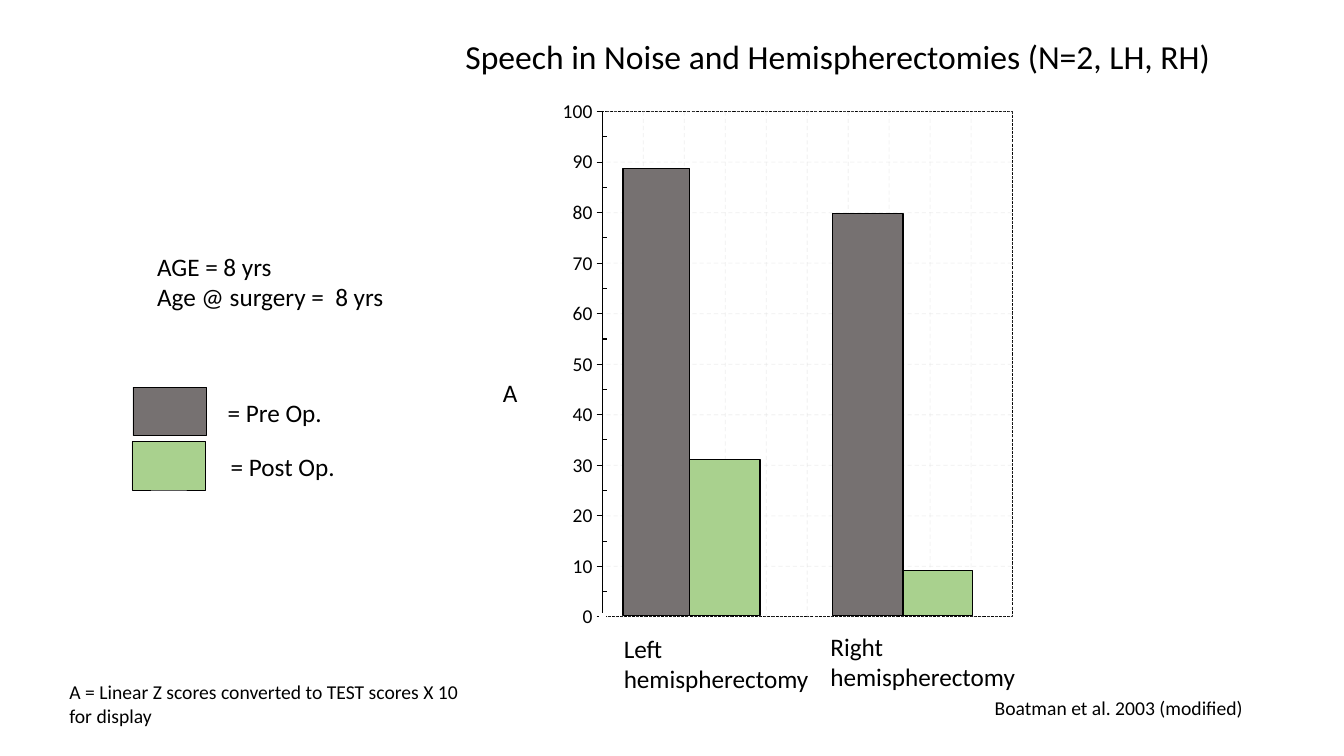
"""Build the slide on speech in noise before and after hemispherectomy."""
from lxml.etree import SubElement
from pptx import Presentation
from pptx.chart.data import XyChartData
from pptx.dml.color import RGBColor as RGB
from pptx.enum.chart import XL_CHART_TYPE as CT, XL_MARKER_STYLE as MS, XL_TICK_MARK as TM
from pptx.enum.dml import MSO_LINE
from pptx.enum.shapes import MSO_SHAPE
from pptx.enum.text import MSO_AUTO_SIZE
from pptx.oxml import parse_xml
from pptx.oxml.ns import nsdecls, qn
from pptx.util import Pt

COLORS = {"text": "000000", "pre": "767171", "post": "A9D18E", "grid": "D9D9D9"}
FONT = "Calibri"
BASELINE, SCALE = 439.7, 3.59

BARS = [
    ("post", 492.5, 50.4, 31),
    ("pre", 445, 47.5, 89),
    ("pre", 594.7, 50.4, 80),
    ("post", 645.1, 49.7, 9),
]
LEGEND = [
    ("post", 94.3, 315.4, "= Post Op.", 157.7, 90),
    ("pre", 95, 276.5, "= Pre Op.", 155.5, 82.8),
]
TEXTS = [
    (["Speech in Noise and Hemispherectomies (N=2, LH, RH)"], 325.4, 22.3, 552.2, 36, 24),
    (["AGE = 8 yrs", "Age @ surgery =  8 yrs"], 105.1, 175.7, 178.6, 51, 18),
    (["A"], 352.1, 265.7, 25.2, 29, 18),
    (["Left", "hemispherectomy"], 438.5, 448.5, 149, 51, 18),
    (["Right", "hemispherectomy"], 586.1, 447.4, 149, 51, 18),
    (["A = Linear Z scores converted to TEST scores X 10", "for display"],
     42.5, 482.4, 300.2, 41, 14),
    (["Boatman et al. 2003 (modified)"], 703.4, 493.9, 193.7, 24.5, 14),
]


def color(name):
    return RGB.from_string(COLORS[name])


def set_attrs(obj, values):
    for key, value in values.items():
        setattr(obj, key, value)


def add_text(s, lines, x, y, w, h, size):
    tf = s.shapes.add_textbox(Pt(x), Pt(y), Pt(w), Pt(h)).text_frame
    set_attrs(tf, {"word_wrap": False, "auto_size": MSO_AUTO_SIZE.SHAPE_TO_FIT_TEXT})
    for i, line in enumerate(lines):
        p = tf.add_paragraph() if i else tf.paragraphs[0]
        r = p.add_run()
        r.text = line
        set_attrs(r.font, {"name": FONT, "size": Pt(size)})
        r.font.color.rgb = color("text")


def add_box(s, fill, x, y, w, h, line_width):
    sp = s.shapes.add_shape(MSO_SHAPE.RECTANGLE, Pt(x), Pt(y), Pt(w), Pt(h))
    sp.shadow.inherit = False
    sp.fill.solid()
    sp.fill.fore_color.rgb = color(fill)
    sp.line.color.rgb = color("text")
    sp.line.width = Pt(line_width)


def set_line(line, name, width, dash=None):
    line.color.rgb = color(name)
    set_attrs(line, {"width": Pt(width), "dash_style": dash})


def frame_plot(chart):
    plot_area = chart._chartSpace.find(".//" + qn("c:plotArea"))
    for layout in plot_area.findall(qn("c:layout")):
        plot_area.remove(layout)
    sides = {"x": 0.074, "y": 0.035, "w": 0.832, "h": 0.93}
    modes = "".join(f'<c:{k}Mode val="edge"/>' for k in "xy")
    values = "".join(f'<c:{k} val="{v}"/>' for k, v in sides.items())
    plot_area.insert(0, parse_xml(
        f'<c:layout {nsdecls("c")}><c:manualLayout><c:layoutTarget val="inner"/>'
        f'{modes}{values}</c:manualLayout></c:layout>'))
    plot_area.append(parse_xml(
        f'<c:spPr {nsdecls("c", "a")}><a:noFill/><a:ln w="{Pt(0.75)}"><a:solidFill>'
        f'<a:srgbClr val="{COLORS["text"]}"/></a:solidFill>'
        '<a:prstDash val="sysDash"/></a:ln></c:spPr>'))
    for grid in plot_area.iter(qn("c:majorGridlines")):
        for clr in grid.iter(qn("a:srgbClr")):
            SubElement(clr, qn("a:alpha")).set("val", "27000")


def add_score_axes(s):
    data = XyChartData()
    series = data.add_series("Series 1")
    for _ in range(4):
        series.add_data_point(0, 0)
    chart = s.shapes.add_chart(CT.XY_SCATTER, Pt(401.8), Pt(66.2), Pt(354.2), Pt(388.1),
                               data).chart
    set_attrs(chart, {"has_legend": False, "has_title": False})
    set_attrs(chart.font, {"name": FONT, "size": Pt(14)})
    chart.font.color.rgb = color("text")
    chart.plots[0].vary_by_categories = False
    points = chart.plots[0].series[0]
    points.smooth = False
    points.format.line.fill.background()
    set_attrs(points.marker, {"style": MS.CIRCLE, "size": 5})
    points.marker.format.fill.background()
    points.marker.format.line.fill.background()
    for axis in (chart.category_axis, chart.value_axis):
        set_attrs(axis, {"minimum_scale": 0, "maximum_scale": 100, "major_unit": 10,
                         "minor_unit": 5, "has_major_gridlines": True,
                         "has_minor_gridlines": False, "major_tick_mark": TM.OUTSIDE,
                         "minor_tick_mark": TM.INSIDE})
        set_line(axis.major_gridlines.format.line, "grid", 0.75, MSO_LINE.DASH)
    chart.category_axis.visible = False
    set_line(chart.value_axis.format.line, "text", 0.75)
    frame_plot(chart)


def main():
    prs = Presentation()
    set_attrs(prs, {"slide_width": Pt(960), "slide_height": Pt(540)})
    s = prs.slides.add_slide(prs.slide_layouts[6])
    add_score_axes(s)
    for fill, x, w, score in BARS:
        h = round(score * SCALE, 2)
        add_box(s, fill, x, BASELINE - h, w, h, 1)
    for fill, x, y, label, label_x, label_w in LEGEND:
        add_box(s, fill, x, y, 52.6, 34.6, 0.5)
        add_text(s, [label], label_x, y + 3.6, label_w, 29, 18)
    for text in TEXTS:
        add_text(s, *text)
    prs.save("out.pptx")


if __name__ == "__main__":
    main()
